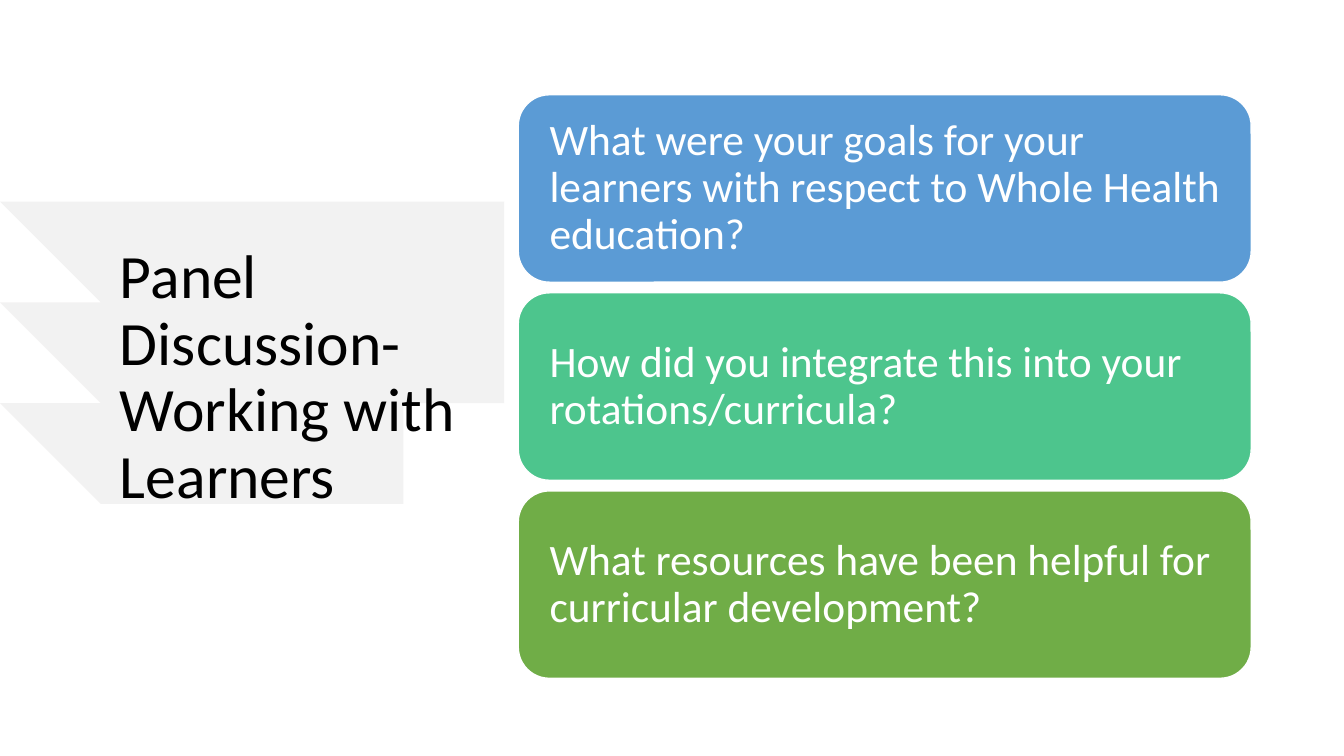
from lxml.etree import SubElement
from pptx import Presentation
from pptx.dml.color import RGBColor
from pptx.enum.shapes import MSO_SHAPE as Shape
from pptx.enum.text import MSO_ANCHOR as Anchor, MSO_AUTO_SIZE as Fit, PP_ALIGN as Align
from pptx.oxml.ns import qn
from pptx.util import Inches, Pt

BLACK = RGBColor(0x00, 0x00, 0x00)
WHITE = RGBColor(0xFF, 0xFF, 0xFF)
GRAY = RGBColor(0xE7, 0xE6, 0xE6)
BLUE = RGBColor(0x5B, 0x9B, 0xD5)
TEAL = RGBColor(0x4D, 0xC5, 0x8D)
GREEN = RGBColor(0x70, 0xAD, 0x47)
FONT = "Calibri"

TITLE = "Panel Discussion- Working with Learners"
CARDS = [
    ("What were your goals for your learners with respect to Whole Health education?", BLUE),
    ("How did you integrate this into your rotations/curricula?", TEAL),
    ("What resources have been helpful for curricular development?", GREEN),
]
LEFT, TOP, WIDE, HIGH, STEP = 5.14, 0.94, 7.27, 1.86, 1.965

UPPER = [(1.3, 2.25), (2.1, 2.5), (3.5, 2.2), (4.23, 1.72)]
RIGHT = [
    (4.58, 1.5), (4.71, 1.58), (4.87, 1.96), (4.79, 2.25), (4.86, 2.35), (4.75, 2.49),
    (4.93, 2.6), (4.82, 2.89), (5.03, 3.02), (5.14, 3.3), (5.03, 3.61), (4.76, 3.99),
]
LOWER = [(4.56, 4.35), (4.3, 4.66), (3.1, 5.6), (1.39, 5.38)]
BASE = [(0.96, 5.2), (0.66, 5.05), (1.02, 5.04), (0.66, 4.86), (0.8, 4.84)]
TIPS = [
    (0.36, 4.49), (0.19, 4.3), (0.2, 4.17), (0.35, 3.6), (0.25, 3.29), (0.3, 3.05),
]
HAIRS = [(0.37, 2.68), (0.32, 2.54), (0.28, 2.25), (0.5, 2.1), (0.46, 1.82)]


def curve(a, b, c, d, parts=10):
    points = []
    for step in range(parts + 1):
        t = step / parts
        u = 1 - t
        points.append(tuple(
            u**3 * p + 3 * u * u * t * q + 3 * u * t * t * r + t**3 * s
            for p, q, r, s in zip(a, b, c, d)))
    return points


def fray(tips, dx, dy):
    return [spot for x, y in tips for spot in ((x, y), (x + dx, y + dy))]


def write(frame, text, size, color):
    frame.word_wrap = True
    frame.auto_size = Fit.NONE
    frame.vertical_anchor = Anchor.MIDDLE
    para = frame.paragraphs[0]
    para.alignment = Align.LEFT
    para.line_spacing = 0.9
    run = para.add_run()
    run.text = text
    run.font.name = FONT
    run.font.size = Pt(size)
    run.font.color.rgb = color


def paint(shape, color):
    shape.shadow.inherit = False
    shape.fill.solid()
    shape.fill.fore_color.rgb = color


def main():
    deck = Presentation()
    deck.slide_width, deck.slide_height = Inches(13.33), Inches(7.5)
    slide = deck.slides.add_slide(deck.slide_layouts[5])
    shapes = slide.shapes

    title = shapes.title
    title.left, title.top = Inches(1.09), Inches(0.75)
    title.width, title.height = Inches(3.82), Inches(6.01)
    write(title.text_frame, TITLE, 44, BLACK)

    edge = (curve(*UPPER) + RIGHT + curve(*LOWER) + BASE
            + fray(TIPS, 0.25, -0.04) + fray(HAIRS, 0.33, 0.2))
    pen = shapes.build_freeform(*edge[0], scale=Inches(1))
    pen.add_line_segments(edge[1:], close=True)
    brush = pen.convert_to_shape()
    paint(brush, GRAY)
    brush.line.fill.background()
    tone = brush.element.spPr.find(qn("a:solidFill"))[0]
    SubElement(tone, qn("a:alpha"), val="50000")
    title.element.addprevious(brush.element)

    for row, (text, color) in enumerate(CARDS):
        card = shapes.add_shape(
            Shape.ROUNDED_RECTANGLE, Inches(LEFT), Inches(TOP + row * STEP),
            Inches(WIDE), Inches(HIGH))
        paint(card, color)
        card.line.color.rgb = WHITE
        card.line.width = Pt(1)
        frame = card.text_frame
        frame.margin_left = frame.margin_right = Inches(0.22)
        frame.margin_top = frame.margin_bottom = Inches(0.22)
        write(frame, text, 31, WHITE)

    deck.save("out.pptx")


if __name__ == "__main__":
    main()
